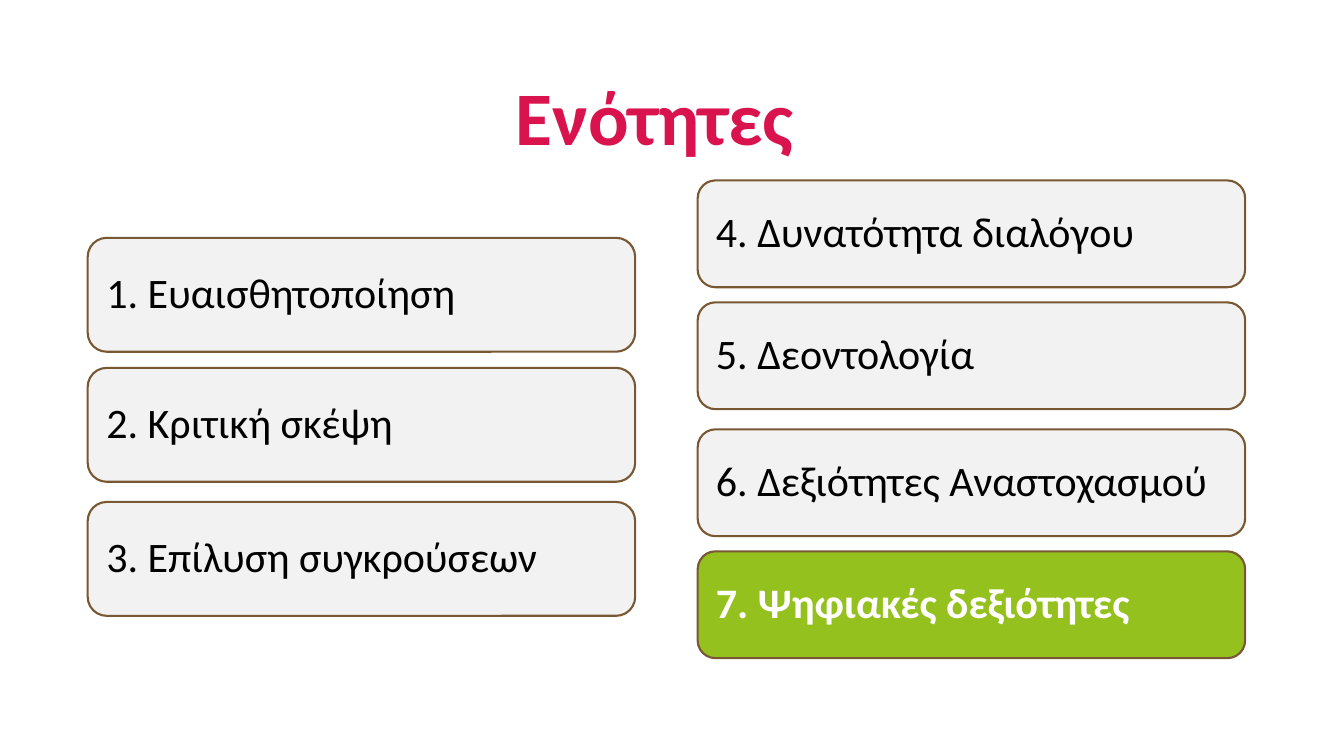
from pptx import Presentation
from pptx.dml.color import RGBColor
from pptx.enum.shapes import MSO_SHAPE
from pptx.enum.text import MSO_ANCHOR, PP_ALIGN
from pptx.util import Inches, Pt

ROUNDED = MSO_SHAPE.ROUNDED_RECTANGLE
LEFT, CENTER = PP_ALIGN.LEFT, PP_ALIGN.CENTER
MIDDLE, BOTTOM = MSO_ANCHOR.MIDDLE, MSO_ANCHOR.BOTTOM

CRIMSON = RGBColor(0xD8, 0x13, 0x4D)
GREY = RGBColor(0xF2, 0xF2, 0xF2)
GREEN = RGBColor(0x95, 0xC1, 0x1F)
BROWN = RGBColor(0x78, 0x58, 0x32)
BLACK = RGBColor(0x00, 0x00, 0x00)
WHITE = RGBColor(0xFF, 0xFF, 0xFF)

CARD_WIDTH = 5.43
CARD_INSET = 0.13
CURRENT_UNIT = 7

# left edge, card height, and the (top, label) of each card
COLUMNS = [
    (0.87, 1.13, [(2.36, "Ευαισθητοποίηση"),
                  (3.65, "Κριτική σκέψη"),
                  (4.98, "Επίλυση συγκρούσεων")]),
    (6.92, 1.06, [(1.79, "Δυνατότητα διαλόγου"),
                  (3.0, "Δεοντολογία"),
                  (4.26, "Δεξιότητες Αναστοχασμού"),
                  (5.47, "Ψηφιακές δεξιότητες")]),
]


class UnitsSlide:
    font = "Calibri"
    title_size = Pt(54)
    card_size = Pt(30)
    line_spacing = 0.9

    def __init__(self, prs):
        self.s = prs.slides.add_slide(prs.slide_layouts[6])

    def add_text(self, tf, text, anchor, align, color, **font_format):
        tf.word_wrap = True
        tf.vertical_anchor = anchor
        p = tf.paragraphs[0]
        p.alignment = align
        p.line_spacing = self.line_spacing
        r = p.add_run()
        r.text = text
        for name, value in {"name": self.font, **font_format}.items():
            setattr(r.font, name, value)
        r.font.color.rgb = color

    def title(self, text, left, top, width, height):
        box = self.s.shapes.add_textbox(*map(Inches, (left, top, width, height)))
        self.add_text(box.text_frame, text, BOTTOM, CENTER, CRIMSON,
                      size=self.title_size, bold=True)

    def card(self, text, left, top, height, current):
        sp = self.s.shapes.add_shape(
            ROUNDED, *map(Inches, (left, top, CARD_WIDTH, height)))
        sp.shadow.inherit = False
        sp.fill.solid()
        sp.fill.fore_color.rgb = GREEN if current else GREY
        sp.line.color.rgb = BROWN
        sp.line.width = Pt(1.5)
        tf = sp.text_frame
        for side in ("left", "top", "right", "bottom"):
            setattr(tf, f"margin_{side}", Inches(CARD_INSET))
        self.add_text(tf, text, MIDDLE, LEFT, WHITE if current else BLACK,
                      size=self.card_size, bold=current)


def main():
    prs = Presentation()
    prs.slide_width, prs.slide_height = Inches(13.33), Inches(7.5)
    slide = UnitsSlide(prs)
    slide.title("Ενότητες", 0.01, -0.3, 12.97, 1.95)
    number = 0
    for left, height, cards in COLUMNS:
        for top, label in cards:
            number += 1
            slide.card(f"{number}. {label}", left, top, height,
                       number == CURRENT_UNIT)
    prs.save("out.pptx")


if __name__ == "__main__":
    main()
